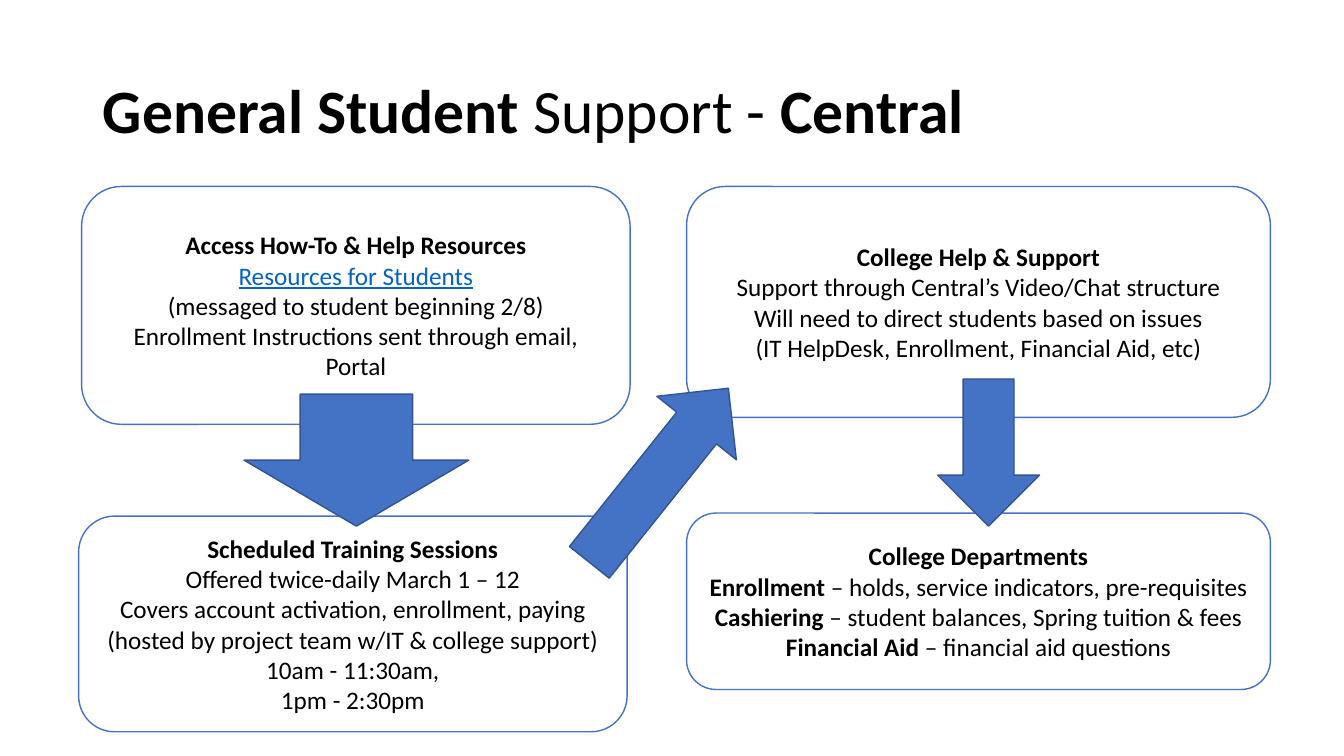
from dataclasses import dataclass

from pptx import Presentation
from pptx.dml.color import RGBColor
from pptx.enum.shapes import MSO_SHAPE
from pptx.enum.text import MSO_ANCHOR, MSO_AUTO_SIZE, PP_ALIGN
from pptx.util import Pt

PX = 9144
SLIDE_W, SLIDE_H = 1333, 750
TITLE_ONLY = 5
ROUNDED = MSO_SHAPE.ROUNDED_RECTANGLE
DOWN_ARROW = MSO_SHAPE.DOWN_ARROW
MIDDLE = MSO_ANCHOR.MIDDLE
NO_FIT = MSO_AUTO_SIZE.NONE
LEFT, CENTER = PP_ALIGN.LEFT, PP_ALIGN.CENTER
PLAIN, BOLD, LINK = "plain", "bold", "link"


@dataclass(frozen=True)
class Theme:
    font: str = "Calibri"
    title_size: int = 44
    body_size: int = 18
    line_width: int = 1
    text: str = "000000"
    link: str = "0563C1"
    card: str = "FFFFFF"
    accent: str = "4472C4"
    arrow_edge: str = "325491"


THEME = Theme()

TITLE_BOX = (92, 40, 1150, 145)
TITLE = [("General Student", BOLD), (" Support - ", PLAIN), ("Central", BOLD)]

RESOURCES = ((81, 185, 544, 236), [
    [("Access How-To & Help Resources", BOLD)],
    [("Resources for Students", LINK)],
    [("(messaged to student beginning 2/8)", PLAIN)],
    [("Enrollment Instructions sent through email, Portal", PLAIN)],
])
HELP = ((681, 185, 579, 229), [
    [("College Help & Support", BOLD)],
    [("Support through Central’s Video/Chat structure", PLAIN)],
    [("Will need to direct students based on issues", PLAIN)],
    [("(IT HelpDesk, Enrollment, Financial Aid, etc)", PLAIN)],
])
DEPARTMENTS = ((681, 509, 579, 175), [
    [("College Departments", BOLD)],
    [("Enrollment", BOLD),
     (" – holds, service indicators, pre-requisites", PLAIN)],
    [("Cashiering", BOLD),
     (" – student balances, Spring tuition & fees", PLAIN)],
    [("Financial Aid", BOLD), (" – financial aid questions", PLAIN)],
])
TRAINING = ((78, 512, 544, 214), [
    [("Scheduled Training Sessions", BOLD)],
    [("Offered twice-daily March 1 – 12", PLAIN)],
    [("Covers account activation, enrollment, paying", PLAIN)],
    [("(hosted by project team w/IT & college support)", PLAIN)],
    [("10am - 11:30am,", PLAIN)],
    [("1pm - 2:30pm", PLAIN)],
])

HELP_TO_DEPARTMENTS = (930, 376, 101, 146)
RESOURCES_TO_TRAINING = (242, 391, 223, 131)
TRAINING_TO_HELP = (603, 361, 101, 221)


def emu(box):
    return [n * PX for n in box]


def rgb(color):
    return RGBColor.from_string(color)


def add_runs(p, runs, size):
    for text, style in runs:
        r = p.add_run()
        r.text = text
        r.font.name = THEME.font
        r.font.size = Pt(size)
        r.font.bold = style == BOLD
        r.font.underline = style == LINK
        r.font.color.rgb = rgb(THEME.link if style == LINK else THEME.text)


def add_outlined(s, kind, box, fill, line):
    sp = s.shapes.add_shape(kind, *emu(box))
    sp.shadow.inherit = False
    sp.fill.solid()
    sp.fill.fore_color.rgb = rgb(fill)
    sp.line.color.rgb = rgb(line)
    sp.line.width = Pt(THEME.line_width)
    return sp


def add_title(s, box, runs):
    sp = s.shapes.title
    sp.left, sp.top, sp.width, sp.height = emu(box)
    tf = sp.text_frame
    tf.auto_size = NO_FIT
    tf.vertical_anchor = MIDDLE
    p = tf.paragraphs[0]
    p.alignment = LEFT
    p.line_spacing = 0.9
    add_runs(p, runs, THEME.title_size)


def add_card(s, box, lines):
    sp = add_outlined(s, ROUNDED, box, THEME.card, THEME.accent)
    tf = sp.text_frame
    tf.word_wrap = True
    tf.vertical_anchor = MIDDLE
    for i, runs in enumerate(lines):
        p = tf.add_paragraph() if i else tf.paragraphs[0]
        p.alignment = CENTER
        add_runs(p, runs, THEME.body_size)


def add_arrow(s, box, rotation=0):
    sp = add_outlined(s, DOWN_ARROW, box, THEME.accent, THEME.arrow_edge)
    sp.rotation = rotation


def build_support_slide(prs):
    s = prs.slides.add_slide(prs.slide_layouts[TITLE_ONLY])
    add_title(s, TITLE_BOX, TITLE)
    for box, lines in (RESOURCES, HELP, DEPARTMENTS, TRAINING):
        add_card(s, box, lines)
    add_arrow(s, HELP_TO_DEPARTMENTS)
    add_arrow(s, RESOURCES_TO_TRAINING)
    add_arrow(s, TRAINING_TO_HELP, 218.6)


def main():
    prs = Presentation()
    prs.slide_width, prs.slide_height = emu((SLIDE_W, SLIDE_H))
    build_support_slide(prs)
    prs.save("out.pptx")


if __name__ == "__main__":
    main()
